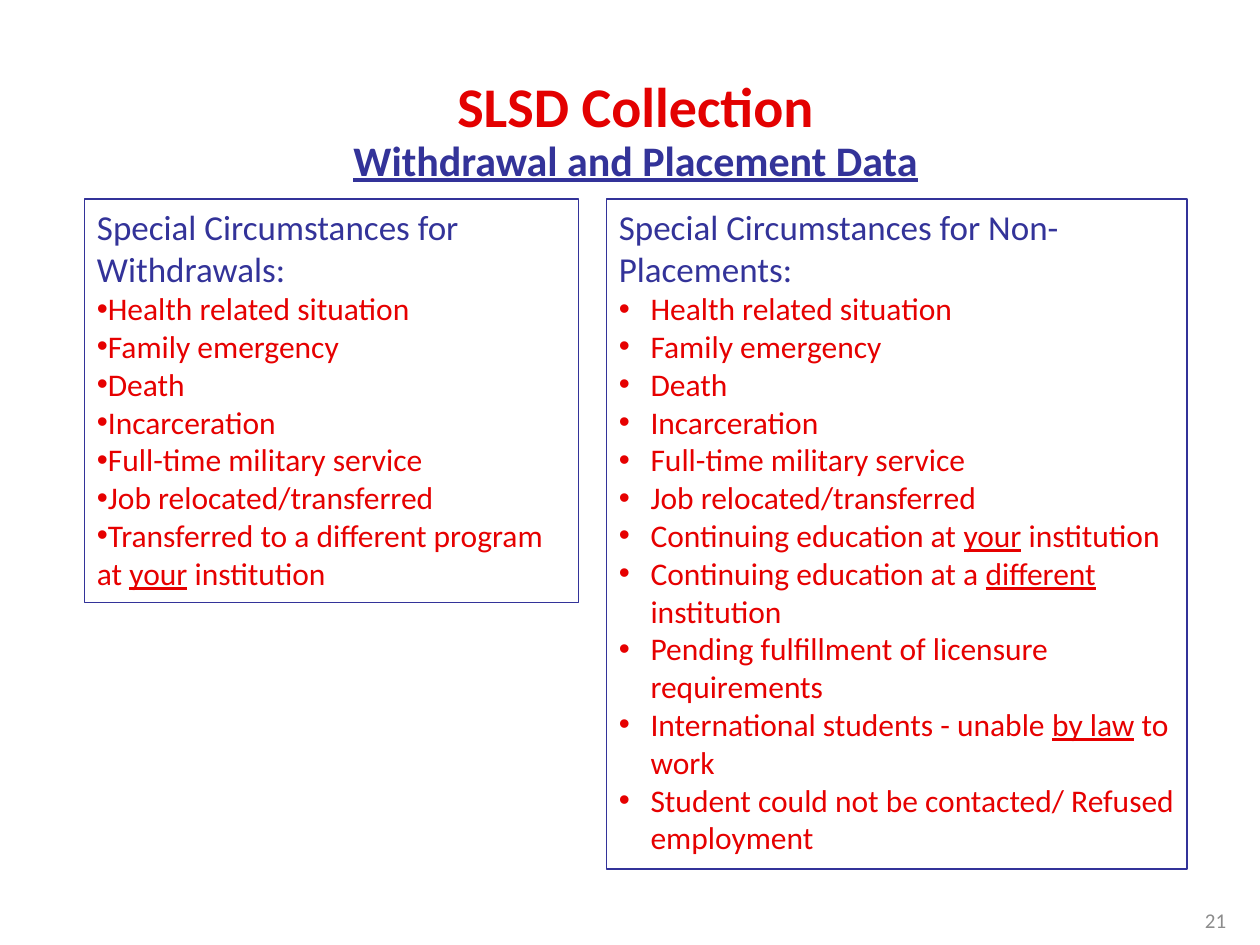
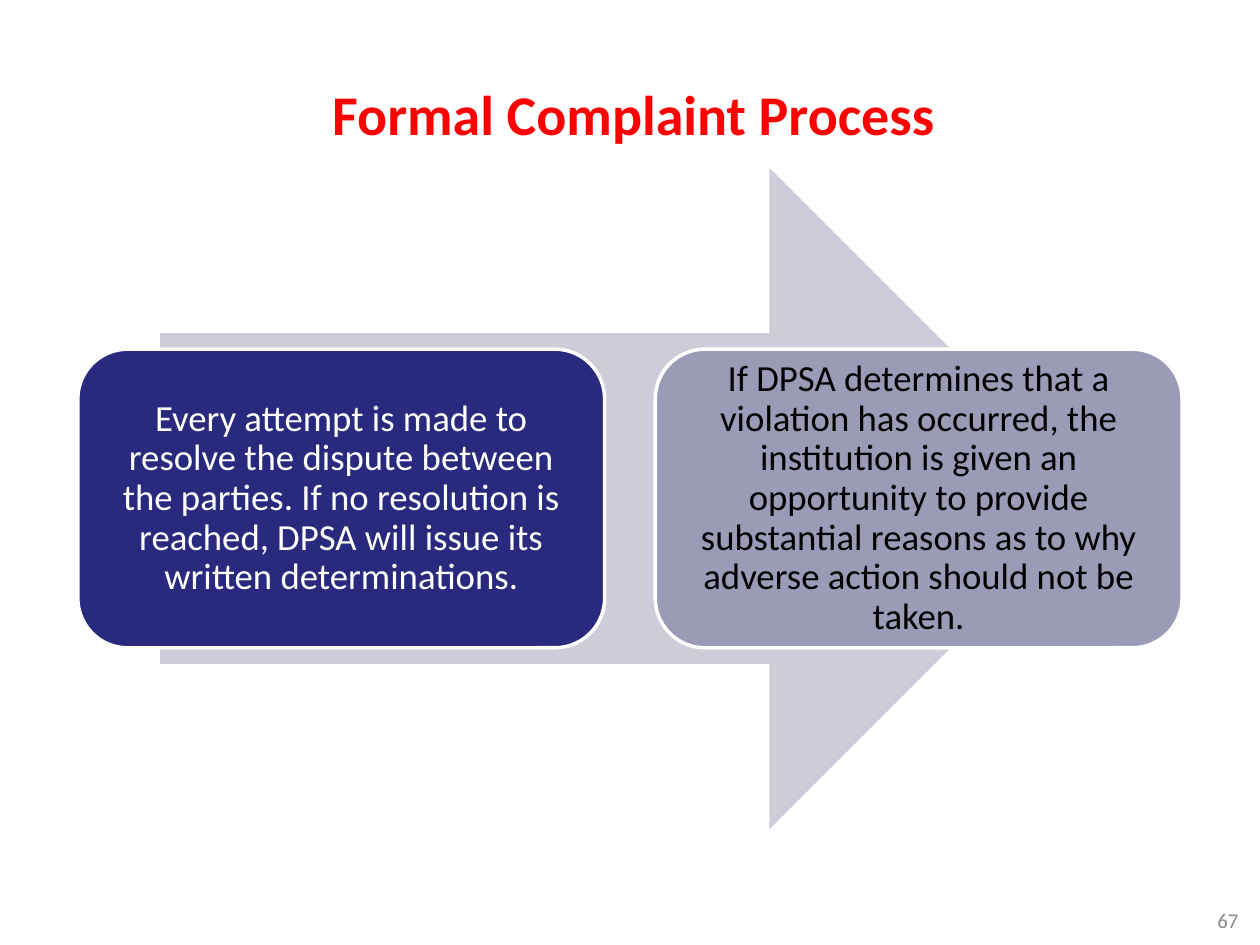
from dataclasses import dataclass

from lxml.etree import SubElement
from pptx import Presentation
from pptx.dml.color import RGBColor
from pptx.enum.shapes import MSO_SHAPE as Form
from pptx.enum.text import MSO_ANCHOR as Anchor, MSO_AUTO_SIZE as Fit, PP_ALIGN as Align
from pptx.oxml.ns import qn
from pptx.util import Cm, Pt


@dataclass(frozen=True)
class Theme:
    font: str = "Calibri"
    red: str = "E30101"
    bright: str = "FF0000"
    item: str = "E60000"
    blue: str = "333399"
    navy: str = "29297D"
    lilac: str = "9B9BB8"
    pale: str = "CDCDDA"
    gray: str = "8C8C8C"
    white: str = "FFFFFF"
    black: str = "000000"
    title: int = 32
    sub: int = 24
    head: int = 20
    list: int = 18
    step: int = 21
    page: int = 12


THEME = Theme()
TWO_LISTS, TITLE_ONLY = 3, 5

SHARED = [
    "Health related situation",
    "Family emergency",
    "Death",
    "Incarceration",
    "Full-time military service",
    "Job relocated/transferred",
]
LEAVING = SHARED + ["Transferred to a different program at _your_ institution"]
UNPLACED = SHARED + [
    "Continuing education at _your_ institution",
    "Continuing education at a _different_ institution",
    "Pending fulfillment of licensure requirements",
    "International students - unable _by law_ to work",
    "Student could not be contacted/ Refused employment",
]
STEPS = [
    ("Every attempt is made to resolve the dispute between the parties. "
     "If no resolution is reached, DPSA will issue its written determinations.",
     THEME.navy, THEME.white),
    ("If DPSA determines that a violation has occurred, the institution is given "
     "an opportunity to provide substantial reasons as to why adverse action "
     "should not be taken.",
     THEME.lilac, THEME.black),
]


def color(code):
    return RGBColor.from_string(code)


def place(shape, left, top, width, height):
    shape.left, shape.top = Cm(left), Cm(top)
    shape.width, shape.height = Cm(width), Cm(height)


class Deck:
    def __init__(self, theme):
        self.theme = theme
        self.prs = Presentation()
        self.prs.slide_width, self.prs.slide_height = Cm(25.4), Cm(19.05)
        self.slide = None

    def start(self, layout, page, left):
        self.slide = self.prs.slides.add_slide(self.prs.slide_layouts[layout])
        box = self.slide.shapes.add_textbox(Cm(left), Cm(18.03), Cm(5.92), Cm(1.02))
        frame = self.frame(box, Anchor.MIDDLE)
        self.label(frame.paragraphs[0], page, self.theme.page, self.theme.gray, Align.RIGHT)

    def frame(self, shape, anchor):
        frame = shape.text_frame
        frame.word_wrap, frame.auto_size = True, Fit.NONE
        frame.vertical_anchor = anchor
        return frame

    def label(self, para, text, size, tint, align=Align.LEFT, bold=False, line=1.0):
        """Fill a paragraph; parts between underscores are underlined."""
        para.alignment, para.line_spacing = align, line
        para.space_before = para.space_after = Pt(0)
        font = para.font
        font.name, font.size, font.bold = self.theme.font, Pt(size), bold
        font.color.rgb = color(tint)
        for i, part in enumerate(text.split("_")):
            if part:
                run = para.add_run()
                run.text = part
                if i % 2:
                    run.font.underline = True

    def bullet(self, para, mark, hang=0.0):
        props = para._p.get_or_add_pPr()
        props.set("marL", str(Cm(hang)))
        props.set("indent", str(-Cm(hang)))
        if mark:
            SubElement(props, qn("a:buFont"), typeface="Arial")
            SubElement(props, qn("a:buChar"), char=mark)
        else:
            SubElement(props, qn("a:buNone"))

    def title(self, area, lines, line=1.0):
        shape = self.slide.shapes.title
        place(shape, *area)
        frame = self.frame(shape, Anchor.TOP)
        for i, (text, size, tint) in enumerate(lines):
            para = frame.add_paragraph() if i else frame.paragraphs[0]
            self.label(para, text, size, tint, Align.CENTER, True, line)

    def panel(self, slot, area, head, items, hang=0.0):
        shape = self.slide.placeholders[slot]
        place(shape, *area)
        shape.line.color.rgb = color(self.theme.blue)
        shape.line.width = Pt(0.75)
        frame = self.frame(shape, Anchor.TOP)
        first = frame.paragraphs[0]
        self.bullet(first, None)
        self.label(first, head, self.theme.head, self.theme.blue)
        for item in items:
            para = frame.add_paragraph()
            self.bullet(para, "•", hang)
            self.label(para, item, self.theme.list, self.theme.item)

    def shape(self, form, area, fill, edge=None):
        shape = self.slide.shapes.add_shape(form, *map(Cm, area))
        shape.shadow.inherit = False
        shape.fill.solid()
        shape.fill.fore_color.rgb = color(fill)
        if edge:
            shape.line.color.rgb = color(edge)
            shape.line.width = Pt(2)
        else:
            shape.line.fill.background()
        return shape

    def step(self, area, text, fill, tint):
        card = self.shape(Form.ROUNDED_RECTANGLE, area, fill, self.theme.white)
        frame = self.frame(card, Anchor.MIDDLE)
        # The preset already insets its text by the corner curve.
        frame.margin_left = frame.margin_right = Cm(0.23)
        frame.margin_top = frame.margin_bottom = Cm(0.23)
        self.label(frame.paragraphs[0], text, self.theme.step, tint, Align.CENTER, line=0.9)


def main():
    deck = Deck(THEME)

    deck.start(TWO_LISTS, "21", 19.05)
    deck.title((1.7, 1.47, 22.23, 2.41), [
        ("SLSD Collection", THEME.title, THEME.red),
        ("Withdrawal and Placement Data", THEME.sub, THEME.blue),
    ], line=0.9)
    deck.slide.shapes.title.text_frame.paragraphs[1].font.underline = True
    deck.panel(1, (1.7, 4.01, 9.96, 8.13),
               "Special Circumstances for Withdrawals:", LEAVING)
    deck.panel(2, (12.22, 4.01, 11.71, 13.51),
               "Special Circumstances for Non-Placements:", UNPLACED, hang=0.64)

    deck.start(TITLE_ONLY, "67", 19.3)
    deck.title((2.26, 1.47, 21.03, 1.63),
               [("Formal Complaint Process", THEME.title, THEME.bright)])
    deck.shape(Form.RIGHT_ARROW, (3.23, 3.38, 18.95, 13.34), THEME.pale)
    for i, (text, fill, tint) in enumerate(STEPS):
        deck.step((1.57 + i * 11.64, 7.04, 10.62, 6.02), text, fill, tint)

    deck.prs.save("out.pptx")


if __name__ == "__main__":
    main()
